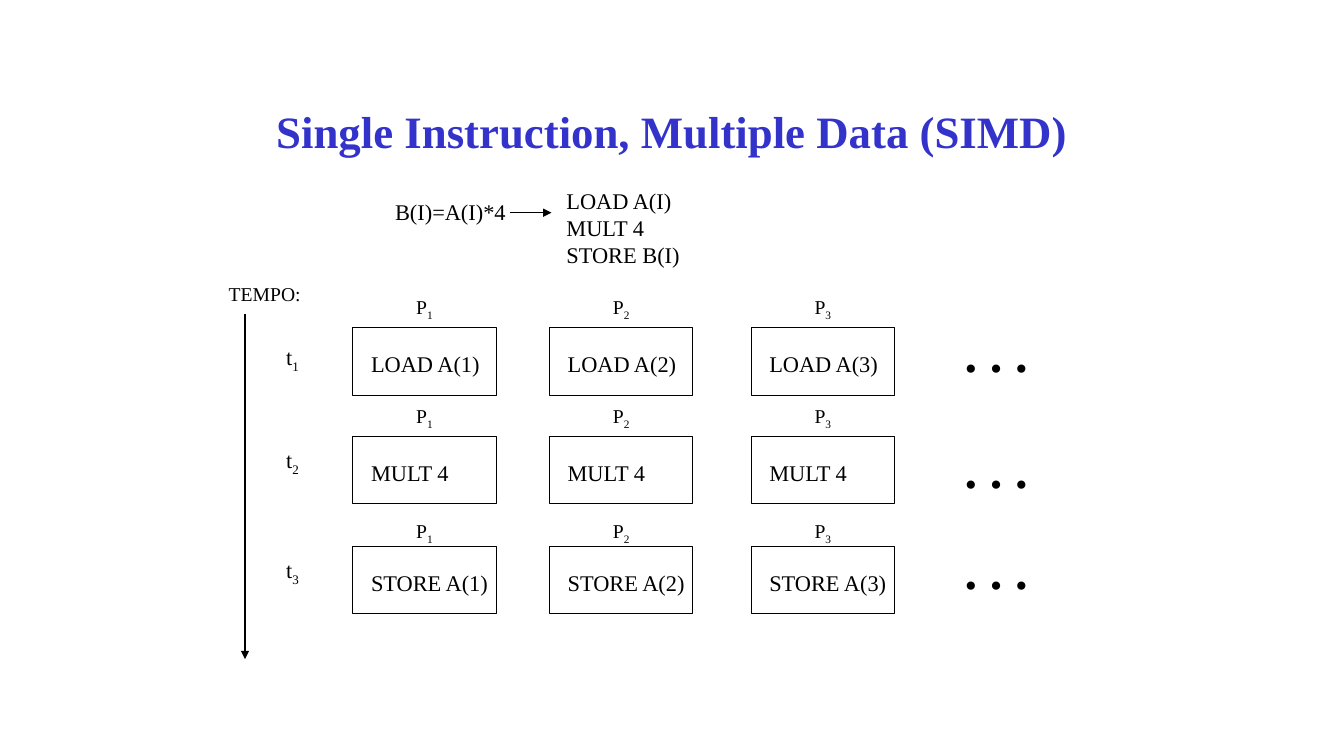
from dataclasses import dataclass

from lxml import etree
from pptx import Presentation
from pptx import util as u
from pptx.dml.color import RGBColor
from pptx.enum import shapes, text
from pptx.oxml import ns


@dataclass(frozen=True)
class Theme:
    """Colours, font and type sizes of the slide."""
    face: str = "Times New Roman"
    ink: RGBColor = RGBColor(0, 0, 0)
    blue: RGBColor = RGBColor(0x33, 0x33, 0xCC)
    title: int = 32
    dots: int = 36
    body: int = 16
    small: int = 14
    line: float = 0.75


LOOK = Theme()
COLS = (3.5, 5.45, 7.45)
STEPS = (
    ("LOAD A({})", 3.25, 2.88, 3.36, 3.15),
    ("MULT 4", 4.33, 3.96, 4.38, 4.3),
    ("STORE A({})", 5.42, 5.1, 5.47, 5.3),
)


def style(para, size, color=LOOK.ink, bold=False):
    """Set the font of a paragraph."""
    font = para.font
    font.name, font.size, font.bold = LOOK.face, u.Pt(size), bold
    font.color.rgb = color


def label(slide, box, words, size=LOOK.body, sub="", color=LOOK.ink, bold=False):
    """Add a text box, with an optional subscript, and return it."""
    shape = slide.shapes.add_textbox(*map(u.Inches, box))
    frame = shape.text_frame
    frame.word_wrap = True
    frame.text = words
    for para in frame.paragraphs:
        style(para, size, color, bold)
    if sub:
        run = frame.paragraphs[0].add_run()
        run.text = sub
        run.font._element.set("baseline", "-25000")
    return shape


def arrow(slide, start, end):
    """Draw a thin line with a triangle at its end."""
    ends = map(u.Inches, (*start, *end))
    link = slide.shapes.add_connector(shapes.MSO_CONNECTOR.STRAIGHT, *ends)
    link.line.color.rgb = LOOK.ink
    link.line.width = u.Pt(LOOK.line)
    etree.SubElement(link.line._get_or_add_ln(), ns.qn("a:tailEnd"), type="triangle")
    etree.SubElement(link._element.spPr, ns.qn("a:effectLst"))


def cell(slide, box, words):
    """Draw an outlined box with one instruction."""
    rect = slide.shapes.add_shape(shapes.MSO_SHAPE.RECTANGLE, *map(u.Inches, box))
    rect.shadow.inherit = False
    rect.fill.background()
    rect.line.color.rgb = LOOK.ink
    rect.line.width = u.Pt(LOOK.line)
    frame = rect.text_frame
    frame.text = words
    frame.margin_left, frame.margin_right = u.Inches(0.18), 0
    frame.margin_top, frame.margin_bottom = u.Inches(0.08), u.Inches(0.04)
    frame.vertical_anchor = text.MSO_ANCHOR.MIDDLE
    para = frame.paragraphs[0]
    para.alignment = text.PP_ALIGN.LEFT
    style(para, LOOK.body)


def heading(slide, box):
    """Add the centred title."""
    shape = label(slide, box, "Single Instruction, Multiple Data (SIMD)",
                  LOOK.title, color=LOOK.blue, bold=True)
    shape.text_frame.vertical_anchor = text.MSO_ANCHOR.MIDDLE
    shape.text_frame.paragraphs[0].alignment = text.PP_ALIGN.CENTER


def program(slide, left, top):
    """Show the statement and the instructions it becomes."""
    label(slide, (left, top + 0.11, 1.35, 0.37), "B(I)=A(I)*4")
    arrow(slide, (left + 1.24, top + 0.3), (left + 1.65, top + 0.3))
    label(slide, (left + 1.7, top, 1.4, 0.9), "LOAD A(I)\nMULT 4\nSTORE B(I)")


def clock(slide, left, top):
    """Draw the time axis with its caption."""
    label(slide, (left, top, 1, 0.33), "TEMPO:", LOOK.small)
    arrow(slide, (left + 0.26, top + 0.37), (left + 0.26, top + 3.79))


def grid(slide):
    """Lay out the steps in rows and the processors in columns."""
    for row, (words, top, head, time, dots) in enumerate(STEPS, 1):
        label(slide, (2.74, time, 0.4, 0.37), "t", sub=str(row))
        for col, left in enumerate(COLS, 1):
            cell(slide, (left, top, 1.42, 0.67), words.format(col))
            label(slide, (left + 0.53, head, 0.42, 0.34), "P", LOOK.small, str(col))
        label(slide, (9.47, dots, 0.9, 0.7), ". . .", LOOK.dots, bold=True)


def main():
    """Build and save the slide."""
    deck = Presentation()
    deck.slide_width, deck.slide_height = u.Inches(13.33), u.Inches(7.5)
    slide = deck.slides.add_slide(deck.slide_layouts[6])
    heading(slide, (1, 0.67, 11.33, 1.25))
    program(slide, 3.82, 1.81)
    clock(slide, 2.17, 2.75)
    grid(slide)
    deck.save("out.pptx")


if __name__ == "__main__":
    main()
